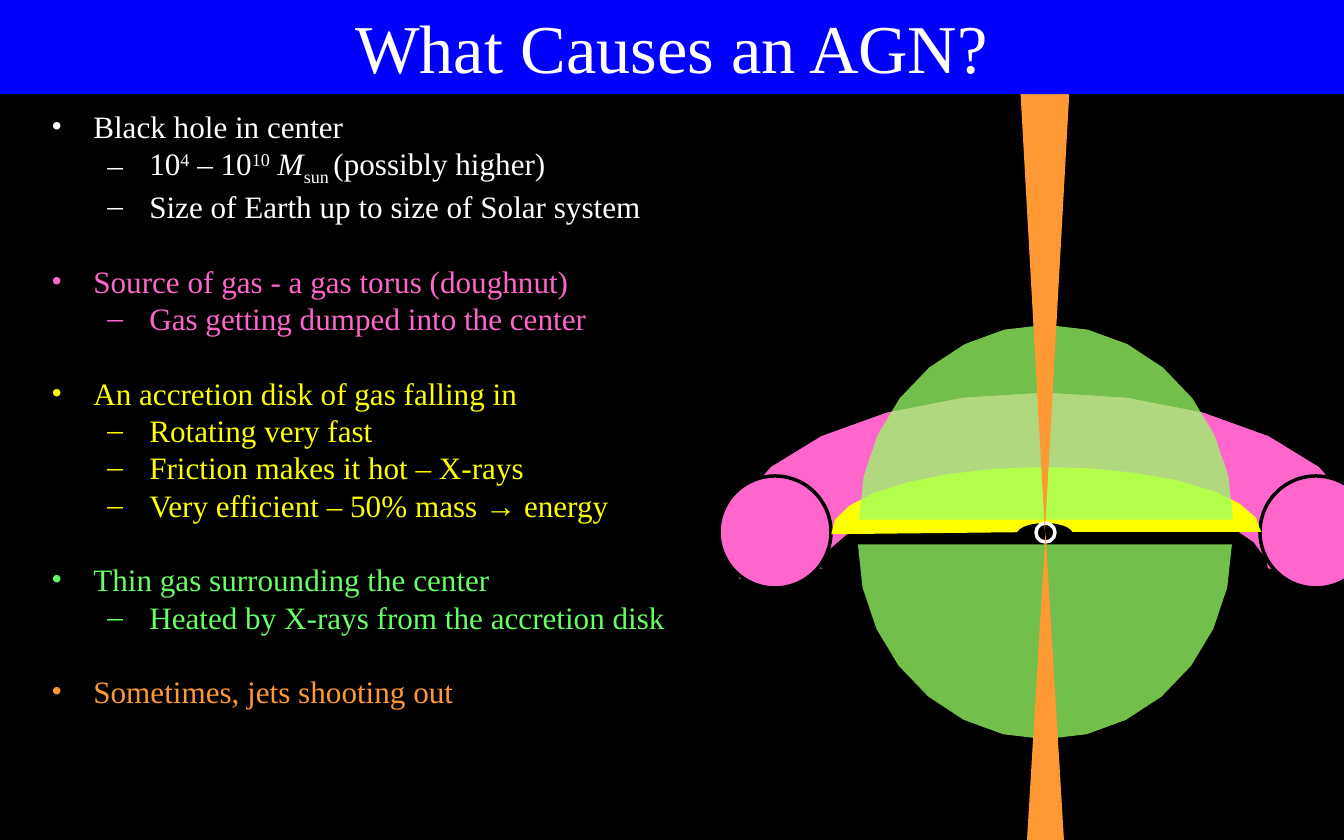
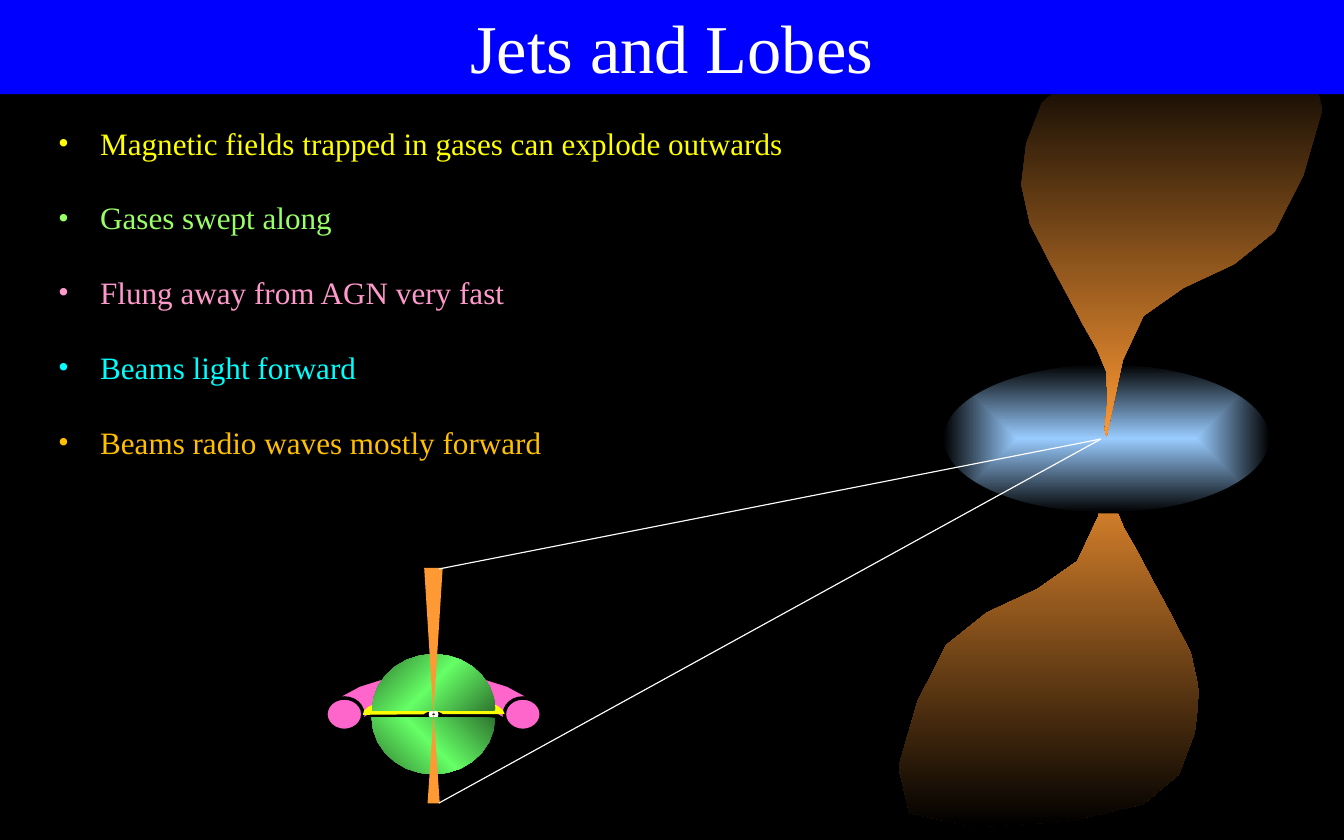
import math
import pptx
import pptx.util
import pptx.dml.color
import pptx.enum.shapes
import pptx.enum.text
import pptx.oxml.ns
from lxml import etree

Inches = pptx.util.Inches
Pt = pptx.util.Pt
RGBColor = pptx.dml.color.RGBColor
MSO = pptx.enum.shapes.MSO_SHAPE
qn = pptx.oxml.ns.qn

FONT = "Times New Roman"
BLACK = RGBColor(0x00, 0x00, 0x00)
WHITE = RGBColor(0xFF, 0xFF, 0xFF)
BLUE = RGBColor(0x00, 0x00, 0xFF)
PINK = RGBColor(0xFF, 0x66, 0xCC)
ROSE = RGBColor(0xFF, 0x99, 0xCC)
YELLOW = RGBColor(0xFF, 0xFF, 0x00)
GREEN = RGBColor(0x66, 0xFF, 0x66)
DARK_GREEN = RGBColor(0x2F, 0x76, 0x2F)
LIME = RGBColor(0x99, 0xFF, 0x66)
ORANGE = RGBColor(0xFF, 0x99, 0x33)
AMBER = RGBColor(0xFF, 0xC0, 0x00)
CYAN = RGBColor(0x00, 0xFF, 0xFF)
SKY = RGBColor(0x99, 0xCC, 0xFF)
ARC_STEPS = 14
CURVE_STEPS = 3


def add_text(p, text, size=20, color=WHITE, italic=False, baseline=0):
    r = p.add_run()
    r.text = text
    r.font.name = FONT
    r.font.size = Pt(size)
    r.font.color.rgb = color
    r.font.italic = italic
    if baseline:
        r.font._element.set("baseline", str(baseline * 1000))


def paint(sp, fill, line=None, width=0.75, alpha=100, angle=None):
    sp.shadow.inherit = False
    if isinstance(fill, list):
        sp.fill.gradient()
        grad = sp._element.spPr.find(qn("a:gradFill"))
        grad.clear()
        grad.set("rotWithShape", "1")
        stops = etree.SubElement(grad, qn("a:gsLst"))
        for i, color in enumerate(fill):
            gs = etree.SubElement(stops, qn("a:gs"), pos=str(100000 * i // (len(fill) - 1)))
            etree.SubElement(gs, qn("a:srgbClr"), val=str(color))
        if angle is None:
            shade = etree.SubElement(grad, qn("a:path"), path="shape")
            etree.SubElement(shade, qn("a:fillToRect"), l="50000", t="50000", r="50000", b="50000")
        else:
            etree.SubElement(grad, qn("a:lin"), ang=str(angle * 60000), scaled="1")
    else:
        sp.fill.solid()
        sp.fill.fore_color.rgb = fill
        if alpha < 100:
            clr = sp._element.spPr.find(qn("a:solidFill")).find(qn("a:srgbClr"))
            etree.SubElement(clr, qn("a:alpha"), val=str(alpha * 1000))
    if line is None:
        sp.line.fill.background()
    else:
        sp.line.color.rgb = line
        sp.line.width = Pt(width)


CAUSES = [
    (0, WHITE, "Black hole in center"),
    (1, WHITE, [("10", {}), ("4", {"baseline": 30}), (" – 10", {}), ("10", {"baseline": 30}),
                (" M", {"italic": True}), ("sun ", {"baseline": -25}), ("(possibly higher)", {})]),
    (1, WHITE, "Size of Earth up to size of Solar system"),
    (0, PINK, "Source of gas - a gas torus (doughnut)"),
    (1, PINK, "Gas getting dumped into the center"),
    (0, YELLOW, "An accretion disk of gas falling in"),
    (1, YELLOW, "Rotating very fast"),
    (1, YELLOW, "Friction makes it hot – X-rays"),
    (1, YELLOW, "Very efficient – 50% mass → energy"),
    (0, GREEN, "Thin gas surrounding the center"),
    (1, GREEN, "Heated by X-rays from the accretion disk"),
    (0, ORANGE, "Sometimes, jets shooting out"),
]
JETS = [
    (0, YELLOW, "Magnetic fields trapped in gases can explode outwards"),
    (0, LIME, "Gases swept along"),
    (0, ROSE, "Flung away from AGN very fast"),
    (0, CYAN, "Beams light forward"),
    (0, AMBER, "Beams radio waves mostly forward"),
]
GLOW = [DARK_GREEN, GREEN, DARK_GREEN]
SLIDES = [
    ("What Causes an AGN?", CAUSES, (0.36, 0.91, 8.33, 5.49), (9.33, 4.83, 1, 1), LIME),
    ("Jets and Lobes", JETS, (0.42, 1.06, 9.25, 3.13), (3.87, 6.4, 0.33, 0.29), GLOW),
]

AGN = [
    ("torus", "arc", (0, 0, 2.83, 1.33, -15, 195), PINK, {"line": BLACK}),
    ("torus", "arc", (0, 0.29, 2, 0.74, -4, 176), BLACK, {"line": BLACK}),
    ("torus", MSO.OVAL, (-2.91, -0.58, 1, 1), PINK, {"line": BLACK, "width": 2.25}),
    ("torus", MSO.OVAL, (1.92, -0.58, 1, 1), PINK, {"line": BLACK, "width": 2.25}),
    ("disk", "arc", (0.01, -0.08, 1.92, 0.58, 0, 182), YELLOW, {}),
    ("disk", "arc", (0, -0.06, 0.25, 0.1, 0, 180), BLACK, {}),
    (None, MSO.OVAL, (-0.08, -0.16, 0.17, 0.17), BLACK, {"line": WHITE, "width": 2.25}),
    (None, "arc", (0.01, -0.19, 1.67, 1.74, 0, 180), "gas", {"alpha": 75, "angle": 45}),
    (None, "arc", (0, 0.03, 1.67, 1.74, 180, 360), "gas", {"alpha": 75, "angle": 315}),
    ("jets", MSO.ISOSCELES_TRIANGLE, (-0.25, -4.58, 0.5, 4.5), ORANGE, {}),
    ("jets", MSO.ISOSCELES_TRIANGLE, (-0.16, -0.08, 0.33, 2.75), ORANGE, {}),
]

LOBE_START = (9.88, 3.9)
LOBE_CURVES = [
    ((9.82, 3.99), (9.93, 3.53), (9.88, 3.32)),
    ((9.82, 3.11), (9.67, 2.93), (9.54, 2.65)),
    ((9.42, 2.38), (9.11, 1.99), (9.12, 1.65)),
    ((9.14, 1.32), (9.19, 0.83), (9.62, 0.65)),
    ((10.06, 0.47), (11.42, 0.33), (11.71, 0.57)),
    ((12, 0.81), (11.62, 1.69), (11.38, 2.07)),
    ((11.12, 2.44), (10.46, 2.51), (10.21, 2.82)),
    ((9.96, 3.12), (9.93, 3.82), (9.88, 3.9)),
]

prs = pptx.Presentation()
prs.slide_width = Inches(12)
prs.slide_height = Inches(7.5)

for title, bullets, box, (cx, cy, sx, sy), gas in SLIDES:
    s = prs.slides.add_slide(prs.slide_layouts[6])
    s.background.fill.solid()
    s.background.fill.fore_color.rgb = BLACK

    tf = s.shapes.add_textbox(*[Inches(v) for v in box]).text_frame
    tf.word_wrap = True
    tf.auto_size = pptx.enum.text.MSO_AUTO_SIZE.SHAPE_TO_FIT_TEXT
    for i, (level, color, runs) in enumerate(bullets):
        p = tf.add_paragraph() if i else tf.paragraphs[0]
        p.level = level
        p.space_before = Pt(24 if i and level == 0 else 0)
        pPr = p._p.get_or_add_pPr()
        pPr.set("marL", str(Pt(27 + 36 * level)))
        pPr.set("indent", str(Pt(-27)))
        etree.SubElement(pPr, qn("a:buFont"), typeface=FONT)
        etree.SubElement(pPr, qn("a:buChar"), char="•–"[level])
        for text, fmt in [(runs, {})] if isinstance(runs, str) else runs:
            add_text(p, text, color=color, **fmt)

    groups = {None: s}
    for group, kind, dims, fill, style in AGN:
        if group not in groups:
            groups[group] = s.shapes.add_group_shape()
        shapes = groups[group].shapes
        if kind == "arc":
            x, y, rx, ry, start, end = dims
            angles = [math.radians(start + (end - start) * i / ARC_STEPS) for i in range(ARC_STEPS + 1)]
            pts = [(x + rx * math.cos(a), y - ry * math.sin(a)) for a in angles] + [(x, y)]
            pts = [(Inches(cx + sx * px), Inches(cy + sy * py)) for px, py in pts]
            fb = shapes.build_freeform(*pts[0])
            fb.add_line_segments(pts[1:])
            sp = fb.convert_to_shape()
        else:
            x, y, w, h = dims
            sp = shapes.add_shape(kind, Inches(cx + sx * x), Inches(cy + sy * y),
                                  Inches(sx * w), Inches(sy * h))
            if kind == MSO.ISOSCELES_TRIANGLE and y < -1:
                sp._element.spPr.find(qn("a:xfrm")).set("flipV", "1")
        paint(sp, gas if fill == "gas" else fill, **style)

    if bullets is JETS:
        lobe = [LOBE_START]
        for c1, c2, end in LOBE_CURVES:
            start = lobe[-1]
            for i in range(1, CURVE_STEPS + 1):
                t = i / CURVE_STEPS
                lobe.append(tuple((1 - t) ** 3 * a + 3 * t * (1 - t) ** 2 * b
                                  + 3 * t * t * (1 - t) * c + t ** 3 * d
                                  for a, b, c, d in zip(start, c1, c2, end)))
        lower = [(19.83 - x, 7.83 - y) for x, y in lobe]
        for outline, colors in [(lower, [ORANGE, BLACK]), (lobe, [BLACK, ORANGE])]:
            if outline is lobe:
                core = s.shapes.add_shape(MSO.OVAL, Inches(8.42), Inches(3.25), Inches(2.92), Inches(1.33))
                paint(core, [SKY, BLACK], line=BLACK)
            pts = [(Inches(x), Inches(y)) for x, y in outline]
            fb = s.shapes.build_freeform(*pts[0])
            fb.add_line_segments(pts[1:-1])
            paint(fb.convert_to_shape(), colors, angle=90)
        for y in (5.08, 7.17):
            ln = s.shapes.add_connector(pptx.enum.shapes.MSO_CONNECTOR.STRAIGHT,
                                        Inches(3.92), Inches(y), Inches(9.83), Inches(3.92))
            ln.line.color.rgb = WHITE
            ln.line.width = Pt(0.75)
            etree.SubElement(ln._element.spPr, qn("a:effectLst"))

    band = s.shapes.add_shape(MSO.RECTANGLE, 0, 0, Inches(12), Inches(0.84))
    paint(band, BLUE)
    tf = band.text_frame
    tf.word_wrap = True
    tf.vertical_anchor = pptx.enum.text.MSO_ANCHOR.TOP
    tf.margin_top = Inches(0.05)
    tf.margin_bottom = Inches(0.05)
    p = tf.paragraphs[0]
    p.alignment = pptx.enum.text.PP_ALIGN.CENTER
    add_text(p, title, size=44)

prs.save("out.pptx")
